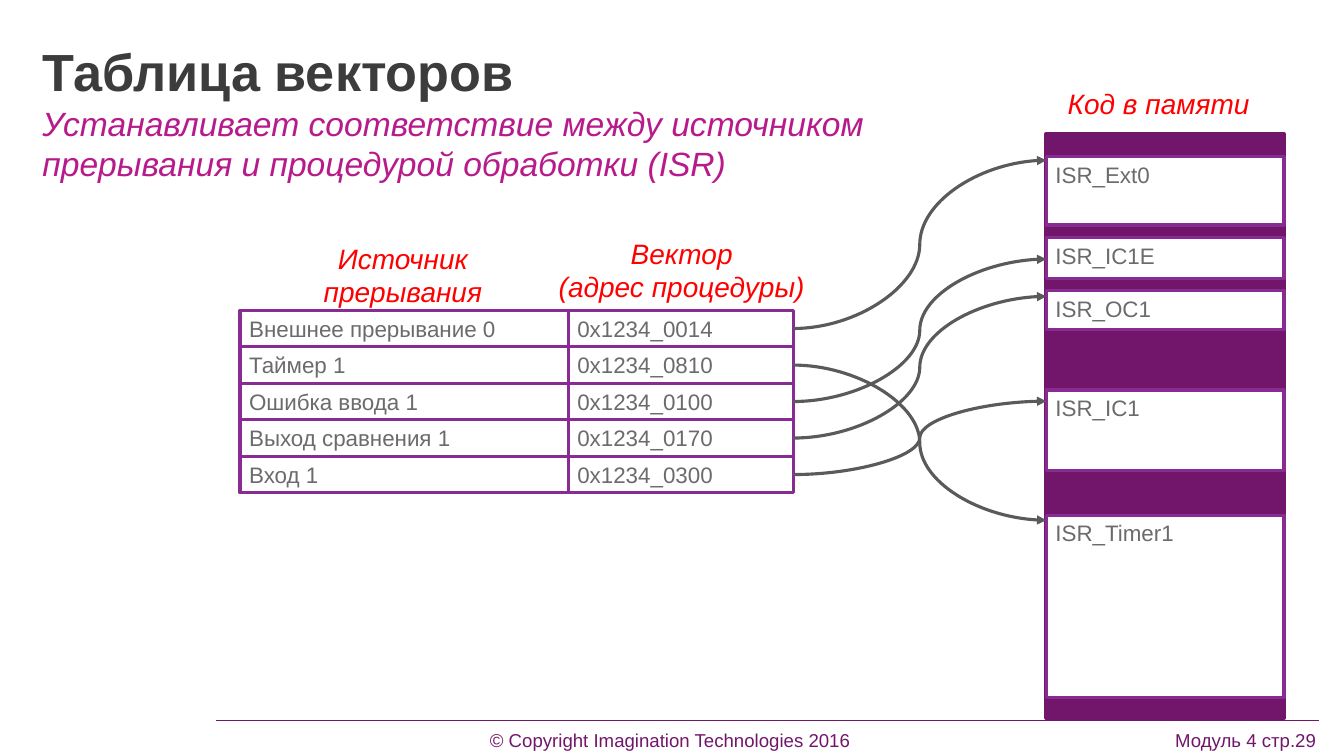
from lxml import etree
from pptx import Presentation
from pptx import util as u
from pptx.dml.color import RGBColor
from pptx.enum import shapes, text
from pptx.oxml import ns

Cm, Pt = u.Cm, u.Pt
WHITE = RGBColor(0xFF, 0xFF, 0xFF)
PLUM = RGBColor(0x72, 0x16, 0x6B)
VIOLET = RGBColor(0x88, 0x2C, 0x94)
PINK = RGBColor(0xB7, 0x1A, 0x8B)
RED = RGBColor(0xFF, 0x00, 0x00)
DARK = RGBColor(0x3C, 0x3C, 0x3C)
GREY = RGBColor(0x6B, 0x6B, 0x6B)
STEEL = RGBColor(0x5A, 0x5A, 0x5A)
LEFT, CENTER = text.PP_ALIGN.LEFT, text.PP_ALIGN.CENTER

# Vector table: source, address
ROWS = [
    ("Внешнее прерывание 0", "0x1234_0014"),
    ("Таймер 1", "0x1234_0810"),
    ("Ошибка ввода 1", "0x1234_0100"),
    ("Выход сравнения 1", "0x1234_0170"),
    ("Вход 1", "0x1234_0300"),
]
ROW_TOP, ROW_H = 7.82, 0.92
SRC_X, SRC_W = 6.05, 8.27
VEC_X, VEC_W = 14.32, 5.67

# Code in memory, in the order of the table rows: name, top, height, arrow end
BLOCKS = [
    ("ISR_Ext0", 3.94, 1.73, 4.04),
    ("ISR_Timer1", 12.98, 4.6, 13.11),
    ("ISR_IC1E", 5.99, 1.04, 6.53),
    ("ISR_OC1", 7.32, 0.99, 7.47),
    ("ISR_IC1", 9.83, 2.03, 10.11),
]
MEM_X, MEM_W = 26.37, 5.99


def write(frame, lines, size, color, bold=False, italic=False,
          align=LEFT, pad=(0, 0), wrap=False):
    """Fill a text frame with one paragraph, breaking between lines."""
    frame.word_wrap = wrap
    frame.vertical_anchor = text.MSO_ANCHOR.TOP
    frame.margin_left = frame.margin_right = Cm(pad[0])
    frame.margin_top = frame.margin_bottom = Cm(pad[1])
    para = frame.paragraphs[0]
    para.alignment = align
    for i, line in enumerate(lines):
        if i:
            para.add_line_break()
        run = para.add_run()
        run.text = line
        font = run.font
        font.name, font.size = "Arial", Pt(size)
        font.bold, font.italic = bold, italic
        font.color.rgb = color
    return para


def label(slide, x, y, w, h, lines, size, color, **style):
    box = slide.shapes.add_textbox(Cm(x), Cm(y), Cm(w), Cm(h))
    return write(box.text_frame, lines, size, color, **style)


def head(slide, x, y, w, h, *lines):
    label(slide, x, y, w, h, lines, 20, RED, italic=True,
          align=CENTER, pad=(0.23, 0.11))


def block(slide, x, y, w, h, fill, edge, width):
    rect = slide.shapes.add_shape(
        shapes.MSO_SHAPE.RECTANGLE, Cm(x), Cm(y), Cm(w), Cm(h))
    rect.shadow.inherit = False
    if fill is None:
        rect.fill.background()
    else:
        rect.fill.solid()
        rect.fill.fore_color.rgb = fill
    rect.line.color.rgb = edge
    rect.line.width = Pt(width)
    return rect


def cell(slide, x, y, w, h, words, fill=None):
    rect = block(slide, x, y, w, h, fill, VIOLET, 2.25)
    write(rect.text_frame, [words], 16, GREY, pad=(0.23, 0.11))


def link(slide, kind, x1, y1, x2, y2, color, width, arrow=False):
    line = slide.shapes.add_connector(kind, Cm(x1), Cm(y1), Cm(x2), Cm(y2))
    line.line.color.rgb = color
    line.line.width = Pt(width)
    props = line._element.spPr
    if arrow:
        tail = etree.SubElement(props.find(ns.qn("a:ln")), ns.qn("a:tailEnd"))
        tail.set("type", "triangle")
    etree.SubElement(props, ns.qn("a:effectLst"))


def footer(slide):
    link(slide, shapes.MSO_CONNECTOR.STRAIGHT, 5.44, 18.16, 33.25, 18.16,
         PLUM, 0.5)
    para = label(
        slide, 0.61, 18.42, 32.66, 0.51,
        ["\t© Copyright Imagination Technologies 2016", ], 13.3, PLUM, wrap=True)
    page = para.add_run()
    page.text = "\tМодуль 4 стр.29"
    page.font.name, page.font.size = "Arial", Pt(13.3)
    page.font.color.rgb = PLUM
    stops = etree.SubElement(para._p.get_or_add_pPr(), ns.qn("a:tabLst"))
    for pos, side in ((16.28, "ctr"), (32.56, "r")):
        etree.SubElement(stops, ns.qn("a:tab"), pos=str(Cm(pos)), algn=side)
    para.line_spacing = 0.9


def main():
    deck = Presentation()
    deck.slide_width, deck.slide_height = Cm(33.87), Cm(19.05)
    slide = deck.slides.add_slide(deck.slide_layouts[6])
    footer(slide)

    # Title and subtitle
    title = label(slide, 1.07, 1.24, 32.21, 1.19, ["Таблица векторов"],
                  37.3, DARK, bold=True)
    title.line_spacing = 0.85
    label(slide, 1.07, 2.59, 32.21, 0.79,
          ["Устанавливает соответствие между источником",
           "прерывания и процедурой обработки (ISR)"],
          24, PINK, italic=True, wrap=True)

    # Memory column with its routines
    block(slide, MEM_X, 3.38, MEM_W, 14.71, PLUM, PLUM, 3)
    for name, top, high, _ in BLOCKS:
        cell(slide, MEM_X, top, MEM_W, high, name, WHITE)

    # Vector table
    for i, (source, vector) in enumerate(ROWS):
        top = ROW_TOP + i * ROW_H
        cell(slide, SRC_X, top, SRC_W, ROW_H, source)
        cell(slide, VEC_X, top, VEC_W, ROW_H, vector)

    # Arrows from each vector to its routine
    for i, (_, _, _, end) in enumerate(BLOCKS):
        link(slide, shapes.MSO_CONNECTOR.CURVE, VEC_X + VEC_W,
             ROW_TOP + (i + 0.5) * ROW_H, MEM_X, end, STEEL, 2.25, arrow=True)

    # Headings
    head(slide, 13.84, 5.84, 6.68, 1.93, "Вектор", "(адрес процедуры)")
    head(slide, 7.92, 5.97, 4.47, 1.93, "Источник", "прерывания")
    head(slide, MEM_X, 2.06, 5.66, 1.07, "Код в памяти")

    deck.save("out.pptx")


if __name__ == "__main__":
    main()
